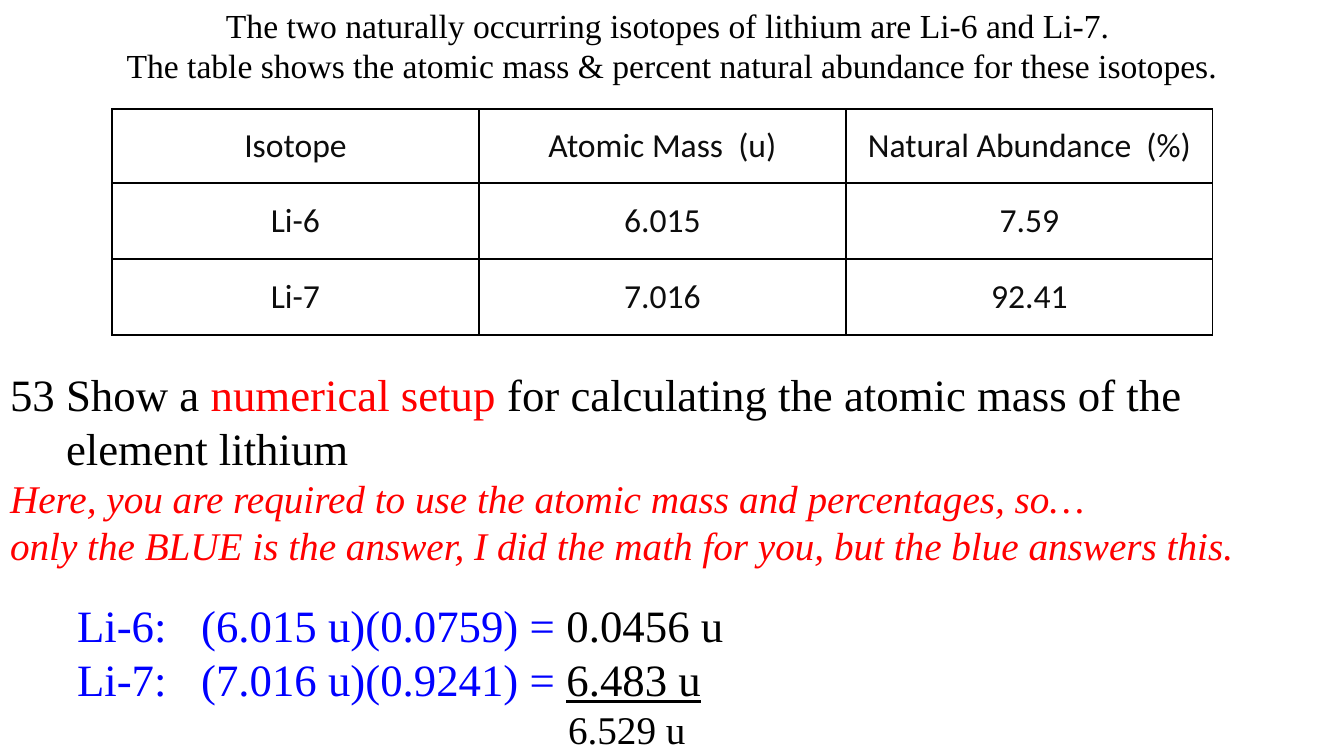
from lxml.etree import SubElement
from pptx import Presentation
from pptx.dml.color import RGBColor as RGB
from pptx.enum.text import MSO_ANCHOR as ANCHOR, MSO_AUTO_SIZE as AUTO, PP_ALIGN as ALIGN
from pptx.oxml.ns import qn
from pptx.util import Pt

BLACK = RGB(0x00, 0x00, 0x00)
INK = RGB(0x0D, 0x0D, 0x0D)
RED = RGB(0xFF, 0x00, 0x00)
BLUE = RGB(0x00, 0x00, 0xFF)

SERIF = "Times New Roman"
SANS = "Calibri"

INTRO = [
    "The two naturally occurring isotopes of lithium are Li-6 and Li-7. ",
    "The table shows the atomic mass & percent natural abundance for these isotopes.",
]
ISOTOPES = [
    ["Isotope", "Atomic Mass  (u)", "Natural Abundance  (%)"],
    ["Li-6", "6.015", "7.59"],
    ["Li-7", "7.016", "92.41"],
]


class Deck:
    EMU_PER_PX = 12192000 / 1344

    def __init__(self, width, height):
        self.prs = Presentation()
        self.prs.slide_width = self.px(width)
        self.prs.slide_height = self.px(height)
        self.slide = self.prs.slides.add_slide(self.prs.slide_layouts[1])

    def px(self, n):
        return round(n * self.EMU_PER_PX)

    def place(self, sp, box):
        for name, n in zip(("left", "top", "width", "height"), box):
            setattr(sp, name, self.px(n))

    def run(self, p, text, **fmt):
        r = p.add_run()
        r.text = text
        style = {"name": SERIF, "size": 32, "color": BLACK} | fmt
        r.font.color.rgb = style.pop("color")
        style["size"] = Pt(style["size"])
        for name, value in style.items():
            setattr(r.font, name, value)

    def paragraph(self, p, runs, align=ALIGN.LEFT, margin=0, indent=0, before=0):
        for name, value in {"alignment": align, "space_before": Pt(before), "space_after": Pt(0)}.items():
            setattr(p, name, value)
        pPr = p._p.get_or_add_pPr()
        pPr.set("marL", str(self.px(margin)))
        pPr.set("indent", str(self.px(indent)))
        SubElement(pPr, qn("a:buNone"))
        for text, fmt in runs:
            self.run(p, text, **fmt)

    def text(self, sp, box, lines):
        self.place(sp, box)
        tf = sp.text_frame
        frame = {"word_wrap": True, "auto_size": AUTO.NONE, "vertical_anchor": ANCHOR.TOP}
        for name, value in frame.items():
            setattr(tf, name, value)
        for i, (runs, layout) in enumerate(lines):
            p = tf.add_paragraph() if i else tf.paragraphs[0]
            self.paragraph(p, runs, **layout)

    def title(self, box, lines):
        self.text(self.slide.shapes.title, box, lines)

    def body(self, box, lines):
        self.text(self.slide.placeholders[1], box, lines)

    def border(self, cell):
        tcPr = cell._tc.get_or_add_tcPr()
        for i, side in enumerate(("a:lnL", "a:lnR", "a:lnT", "a:lnB")):
            ln = tcPr.makeelement(qn(side), {"w": str(Pt(1))})
            fill = SubElement(ln, qn("a:solidFill"))
            SubElement(fill, qn("a:srgbClr"), val=str(BLACK))
            tcPr.insert(i, ln)

    def table(self, left, top, col_width, row_heights, rows):
        cols = len(rows[0])
        size = (left, top, col_width * cols, sum(row_heights))
        tbl = self.slide.shapes.add_table(len(rows), cols, *map(self.px, size)).table
        tbl.first_row = tbl.horz_banding = False
        for col in tbl.columns:
            col.width = self.px(col_width)
        for row, height, values in zip(tbl.rows, row_heights, rows):
            row.height = self.px(height)
            for cell, value in zip(row.cells, values):
                cell.vertical_anchor = ANCHOR.MIDDLE
                cell.fill.background()
                self.border(cell)
                runs = [(value, {"name": SANS, "size": 24, "color": INK})]
                self.paragraph(cell.text_frame.paragraphs[0], runs, ALIGN.CENTER)

    def save(self):
        self.prs.save("out.pptx")


def main():
    deck = Deck(1344, 756)
    deck.title((0, 0, 1344, 92), [([(s, {"size": 24})], {"align": ALIGN.CENTER}) for s in INTRO])
    deck.table(112, 109, 367, (74, 76, 76), ISOTOPES)

    hint = {"size": 28, "color": RED, "italic": True}
    blue = {"color": BLUE}
    step = {"margin": 191, "indent": -124}
    deck.body((0, 362, 1344, 407), [
        ([("53 Show a ", {}), ("numerical setup ", {"color": RED}),
          ("for calculating the atomic mass of the", {})], {}),
        ([("element lithium", {})], {"margin": 56}),
        ([("Here, you are required to use the atomic mass and percentages, so…", hint)], {}),
        ([("only the BLUE is the answer, I did the math for you, but the blue answers this.", hint)], {}),
        ([("Li-6:\t(6.015 u)(0.0759) = ", blue), ("0.0456 u", {})], step | {"before": 21}),
        ([("Li-7:\t(7.016 u)(0.9241) = ", blue), ("6.483 u", {"underline": True})], step),
        ([("6.529 u", {"size": 28})], {"margin": 558}),
    ])
    deck.save()


if __name__ == "__main__":
    main()
